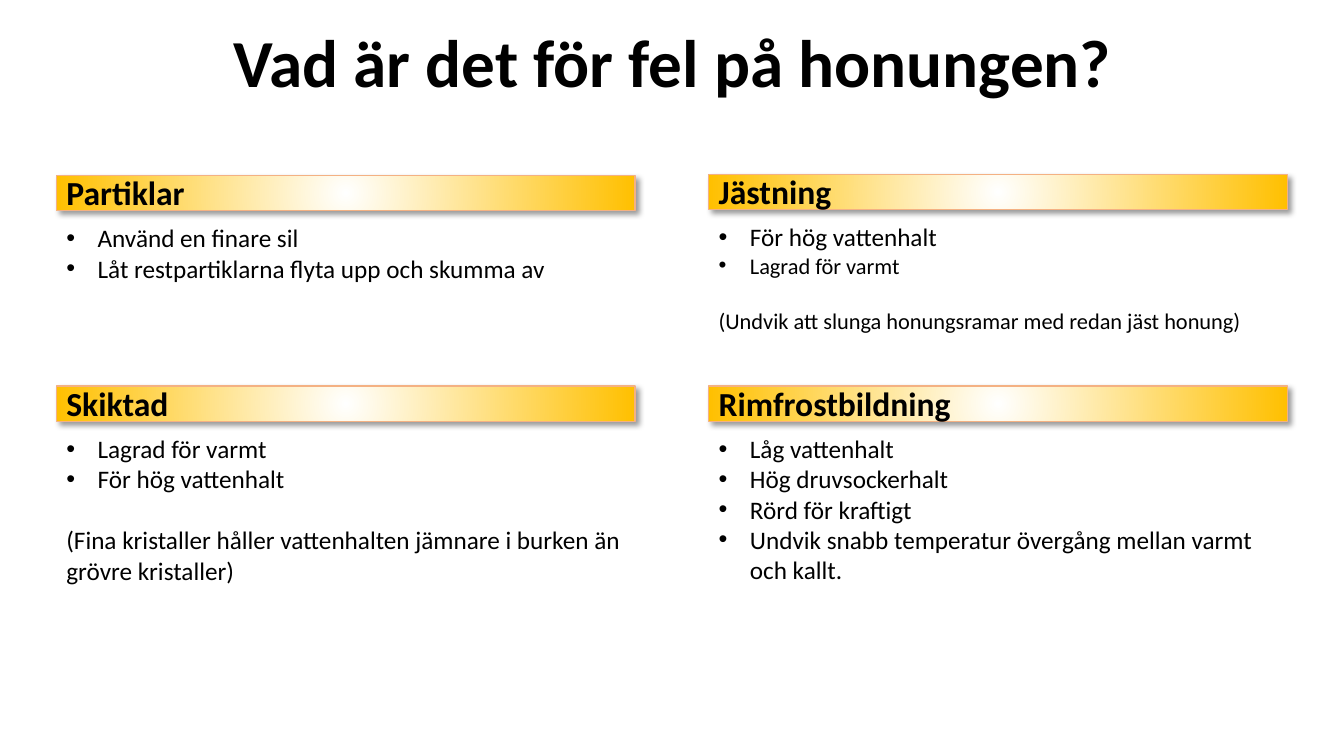
from dataclasses import dataclass
from typing import Any

from pptx import Presentation, dml, oxml, util as u
from pptx.dml import color
from pptx.enum import shapes, text
from pptx.oxml import ns


@dataclass(frozen=True)
class Theme:
    """Colours, font and type sizes of the slide."""
    font: str = "Calibri"
    ink: str = "000000"
    glow: str = "FFFFFF"
    honey: str = "FFC000"
    border: str = "F4B183"
    title_size: int = 48
    heading_size: int = 24
    body_size: int = 18
    small_size: int = 16


@dataclass(frozen=True)
class Line:
    """One paragraph of a fault card, a bullet or a closing note."""
    words: str
    size: int
    bullet: bool = True


@dataclass(frozen=True)
class Fault:
    """A honey fault with its place and its causes."""
    heading: str
    left: float
    top: float
    body_height: float
    lines: tuple[Line, ...]


THEME = Theme()
BODY, SMALL = THEME.body_size, THEME.small_size
LEFT, RIGHT = 0.56, 7.03
CARD_WIDTH = 5.74
INDENT = 0.31

FAULTS = (
    Fault("Partiklar", LEFT, 1.66, 0.71, (
        Line("Använd en finare sil", BODY),
        Line("Låt restpartiklarna flyta upp och skumma av", BODY))),
    Fault("Jästning", RIGHT, 1.65, 1.21, (
        Line("För hög vattenhalt", BODY),
        Line("Lagrad för varmt", SMALL),
        Line("(Undvik att slunga honungsramar med redan jäst honung)", SMALL, False))),
    Fault("Skiktad", LEFT, 3.75, 1.62, (
        Line("Lagrad för varmt", BODY),
        Line("För hög vattenhalt", BODY),
        Line("(Fina kristaller håller vattenhalten jämnare i burken än grövre kristaller)",
             BODY, False))),
    Fault("Rimfrostbildning", RIGHT, 3.75, 1.62, (
        Line("Låg vattenhalt", BODY),
        Line("Hög druvsockerhalt", BODY),
        Line("Rörd för kraftigt", BODY),
        Line("Undvik snabb temperatur övergång mellan varmt och kallt.", BODY))),
)


def apply_format(target: Any, values: dict[str, Any]) -> None:
    """Set every attribute named in the dict."""
    for name, value in values.items():
        setattr(target, name, value)


def box(left: float, top: float, width: float, height: float) -> tuple[u.Length, ...]:
    """Turn a rectangle in inches into lengths."""
    return tuple(u.Inches(value) for value in (left, top, width, height))


def write(paragraph: Any, words: str, size: int, bold: bool = False) -> None:
    """Fill a paragraph with one formatted run."""
    run = paragraph.add_run()
    run.text = words
    apply_format(run.font, {"name": THEME.font, "size": u.Pt(size), "bold": bold})
    run.font.color.rgb = color.RGBColor.from_string(THEME.ink)


def add_text_frame(parent: Any, place: tuple[u.Length, ...], **values: Any) -> Any:
    """Add a wrapping text box and return its text frame."""
    frame = parent.add_textbox(*place).text_frame
    apply_format(frame, {"word_wrap": True, **values})
    return frame


def add_bullet(paragraph: Any) -> None:
    """Give a paragraph a hanging round bullet."""
    properties = paragraph._p.get_or_add_pPr()
    properties.set("marL", str(u.Inches(INDENT)))
    properties.set("indent", str(-u.Inches(INDENT)))
    properties.append(oxml.parse_xml(f'<a:buFont {ns.nsdecls("a")} typeface="Arial"/>'))
    properties.append(oxml.parse_xml(f'<a:buChar {ns.nsdecls("a")} char="•"/>'))


def add_bar(parent: Any, place: tuple[u.Length, ...]) -> None:
    """Draw the honey bar with its radial gradient and soft shadow."""
    shape = parent.add_shape(shapes.MSO_SHAPE.RECTANGLE, *place)
    shape.line.color.rgb = color.RGBColor.from_string(THEME.border)
    shape.line.width = u.Pt(1)
    shape.shadow.inherit = False
    properties = shape._element.spPr
    properties.find(ns.qn("a:ln")).addprevious(oxml.parse_xml(
        f'<a:gradFill {ns.nsdecls("a")} rotWithShape="1"><a:gsLst>'
        f'<a:gs pos="0"><a:srgbClr val="{THEME.glow}"/></a:gs>'
        f'<a:gs pos="100000"><a:srgbClr val="{THEME.honey}"/></a:gs></a:gsLst>'
        '<a:path path="circle"><a:fillToRect l="50000" t="50000" r="50000" b="50000"/>'
        '</a:path></a:gradFill>'))
    properties.find(ns.qn("a:effectLst")).append(oxml.parse_xml(
        f'<a:outerShdw {ns.nsdecls("a")} blurRad="{u.Pt(4)}" dist="{u.Pt(3)}" '
        f'dir="2700000" algn="tl" rotWithShape="0"><a:srgbClr val="{THEME.ink}">'
        '<a:alpha val="40000"/></a:srgbClr></a:outerShdw>'))


def add_fault(slide: Any, fault: Fault) -> None:
    """Draw one fault as a group of bar, heading and causes."""
    parent = slide.shapes.add_group_shape().shapes
    grow = text.MSO_AUTO_SIZE.SHAPE_TO_FIT_TEXT
    add_bar(parent, box(fault.left, fault.top + 0.08, CARD_WIDTH, 0.35))
    heading = add_text_frame(parent, box(fault.left, fault.top, 4.19, 0.5), auto_size=grow)
    write(heading.paragraphs[0], fault.heading, THEME.heading_size, True)
    body = add_text_frame(
        parent, box(fault.left, fault.top + 0.5, CARD_WIDTH, fault.body_height), auto_size=grow)
    for index, line in enumerate(fault.lines):
        paragraph = body.add_paragraph() if index else body.paragraphs[0]
        if line.bullet:
            add_bullet(paragraph)
        else:
            paragraph.space_before = u.Pt(round(line.size * 1.22))
        write(paragraph, line.words, line.size)


def add_title(slide: Any, words: str) -> None:
    """Write the centred slide title."""
    frame = add_text_frame(slide.shapes, box(0.92, 0.22, 11.5, 0.86),
                           vertical_anchor=text.MSO_ANCHOR.MIDDLE)
    paragraph = frame.paragraphs[0]
    apply_format(paragraph, {"alignment": text.PP_ALIGN.CENTER, "line_spacing": 0.9})
    write(paragraph, words, THEME.title_size, True)


def main() -> None:
    """Build and save the presentation."""
    presentation = Presentation()
    apply_format(presentation, {"slide_width": u.Inches(13.33), "slide_height": u.Inches(7.5)})
    slide = presentation.slides.add_slide(presentation.slide_layouts[6])
    add_title(slide, "Vad är det för fel på honungen?")
    for fault in FAULTS:
        add_fault(slide, fault)
    presentation.save("out.pptx")


if __name__ == "__main__":
    main()
